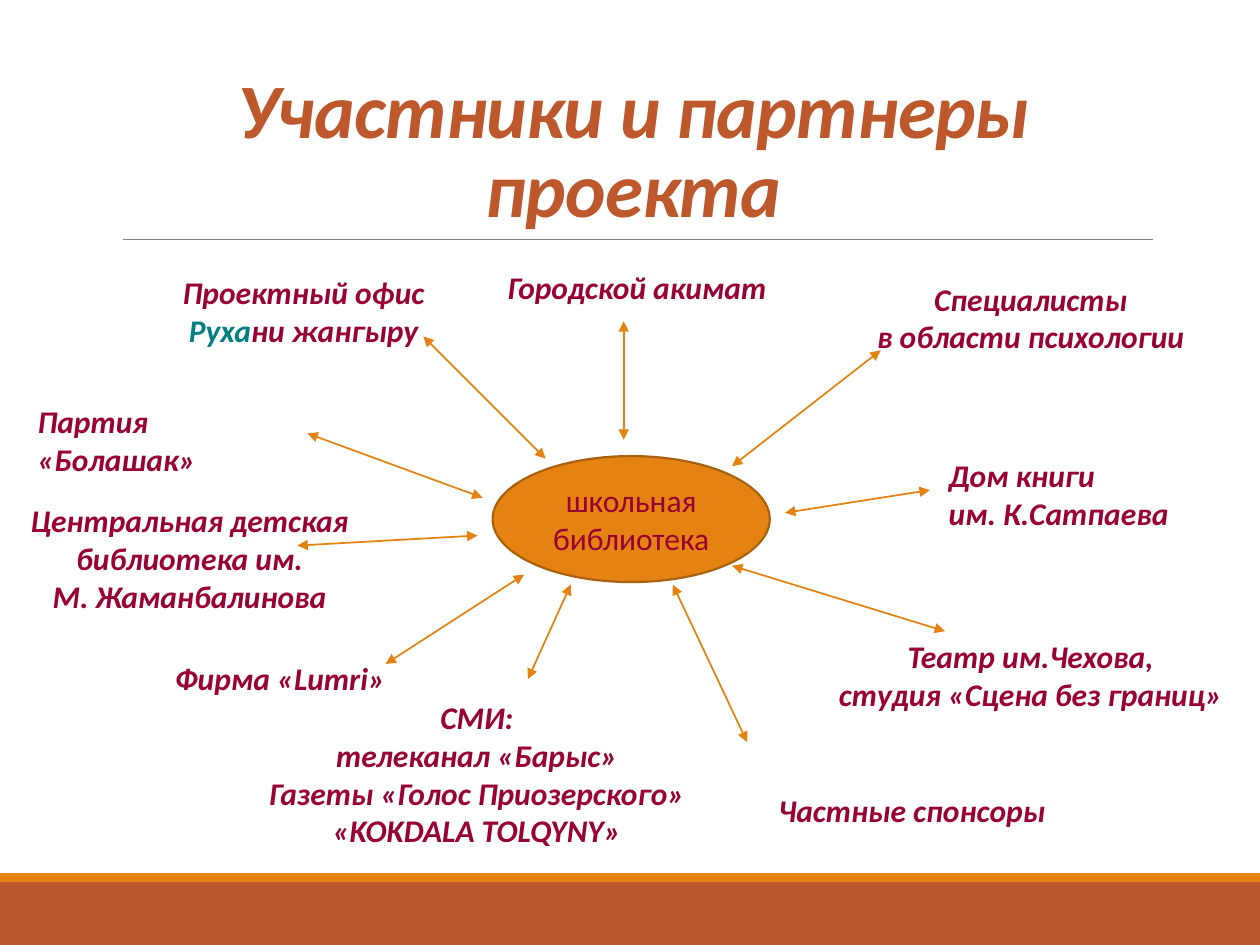
from lxml.etree import SubElement
from pptx import Presentation
from pptx.dml.color import RGBColor as Rgb
from pptx.enum.shapes import MSO_CONNECTOR as Link, MSO_SHAPE as Kind
from pptx.enum.text import MSO_ANCHOR as Anchor, PP_ALIGN as Align
from pptx.oxml.ns import qn
from pptx.util import Inches, Pt

THEME = dict(font="Calibri", rust="BD582C", gold="E48312", edge="A9610D",
             gray="808080", wine="990033", teal="008080", head=44, body=18)

# The slide is a grid of 100 columns by 75 rows with square cells.
COLS, ROWS = 100, 75
CELL = Inches(10) / COLS

TITLE = "Участники и партнеры проекта"
HUB = "школьная библиотека"

# column, row, width, height, alignment, lines
# (a line is a text or a list of text and colour pairs)
PARTNERS = [
    (39.3, 20.8, 22.8, 4, "left", ["Городской акимат"]),
    (19.1, 54.9, 37.5, 16.2, "center",
     ["СМИ:", "телеканал «Барыс»", "Газеты «Голос Приозерского»",
      "«KOKDALA TOLQYNY»"]),
    (74.3, 35.7, 19.7, 7.1, "left", ["Дом книги", "им. К.Сатпаева"]),
    (2, 31.4, 23.6, 4, "left", ["Партия «Болашак»"]),
    (12.9, 51.8, 18.7, 4, "left", ["Фирма «Lumri»"]),
    (0.9, 39.3, 28.3, 10.1, "center",
     ["Центральная детская библиотека им.", "М. Жаманбалинова"]),
    (13.1, 21.2, 22, 7.1, "center",
     ["Проектный офис", [("Руха", "teal"), ("ни жангыру", "wine")]]),
    (65.7, 21.7, 32.2, 7.1, "center",
     ["Специалисты", "в области психологии"]),
    (65.2, 50.1, 33.2, 7.1, "center",
     ["Театр им.Чехова,", "студия «Сцена без границ»"]),
    (60.8, 62.3, 23.4, 4, "left", ["Частные спонсоры"]),
]

# from column, from row, to column, to row
ARROWS = [
    (49.5, 34.9, 49.5, 25.5), (33.6, 26.7, 43.3, 36.4),
    (58.1, 44.9, 75, 50.1), (58.1, 37, 69.9, 27.8),
    (38.3, 39.5, 24.4, 34.4), (45.3, 46.4, 41.9, 53.9),
    (41.6, 45.6, 30.6, 52.7), (62.3, 40.7, 73.8, 38.9),
    (23.6, 43.3, 37.9, 42.5), (53.4, 46.4, 59.3, 58.9),
]


def grid(*cells):
    return [round(c * CELL) for c in cells]


def color(name):
    return Rgb.from_string(THEME[name])


def write(shape, lines, size="body", ink="wine", bold=True, align="center",
          anchor=Anchor.TOP, wrap=True, lead=None, track=None):
    frame = shape.text_frame
    frame.word_wrap, frame.vertical_anchor = wrap, anchor
    for i, line in enumerate(lines):
        para = frame.paragraphs[0] if i == 0 else frame.add_paragraph()
        para.alignment = Align[align.upper()]
        if lead:
            para.line_spacing = lead
        for text, tone in [(line, ink)] if isinstance(line, str) else line:
            run = para.add_run()
            run.text = text
            font = run.font
            font.name, font.size = THEME["font"], Pt(THEME[size])
            font.bold = font.italic = bold
            font.color.rgb = color(tone)
            if track:
                run._r.get_or_add_rPr().set("spc", str(track))


def block(slide, kind, cells, fill, edge=None):
    shape = slide.shapes.add_shape(kind, *grid(*cells))
    shape.shadow.inherit = False
    shape.fill.solid()
    shape.fill.fore_color.rgb = color(fill)
    if edge:
        shape.line.color.rgb, shape.line.width = color(edge), Pt(1.25)
    else:
        shape.line.fill.background()
    return shape


def rule(slide, ends, ink, width, heads=False):
    line = slide.shapes.add_connector(Link.STRAIGHT, *grid(*ends))
    line.line.color.rgb, line.line.width = color(ink), Pt(width)
    props = line._element.spPr
    if heads:
        for tag in ("a:headEnd", "a:tailEnd"):
            SubElement(props.find(qn("a:ln")), qn(tag), type="triangle")
    SubElement(props, qn("a:effectLst"))


def main():
    deck = Presentation()
    deck.slide_width, deck.slide_height = grid(COLS, ROWS)
    slide = deck.slides.add_slide(deck.slide_layouts[6])

    block(slide, Kind.RECTANGLE, (0, 70, COLS, 5), "rust")
    block(slide, Kind.RECTANGLE, (0, 69.3, COLS, 0.7), "gold")
    rule(slide, (9.8, 19, 91.5, 19), "gray", 0.5)
    title = slide.shapes.add_textbox(*grid(9, 3.1, 82.5, 15.9))
    write(title, [TITLE], size="head", ink="rust", anchor=Anchor.BOTTOM,
          lead=0.85, track=-50)

    hub = block(slide, Kind.OVAL, (39.1, 36.2, 22, 10), "gold", "edge")
    write(hub, [HUB], bold=False, anchor=Anchor.MIDDLE)
    for ends in ARROWS:
        rule(slide, ends, "gold", 1, heads=True)
    for *cells, align, lines in PARTNERS:
        box = slide.shapes.add_textbox(*grid(*cells))
        write(box, lines, align=align)
        # One-line labels keep to one line whatever their width.
        box.text_frame.word_wrap = len(lines) > 1

    deck.save("out.pptx")


if __name__ == "__main__":
    main()
